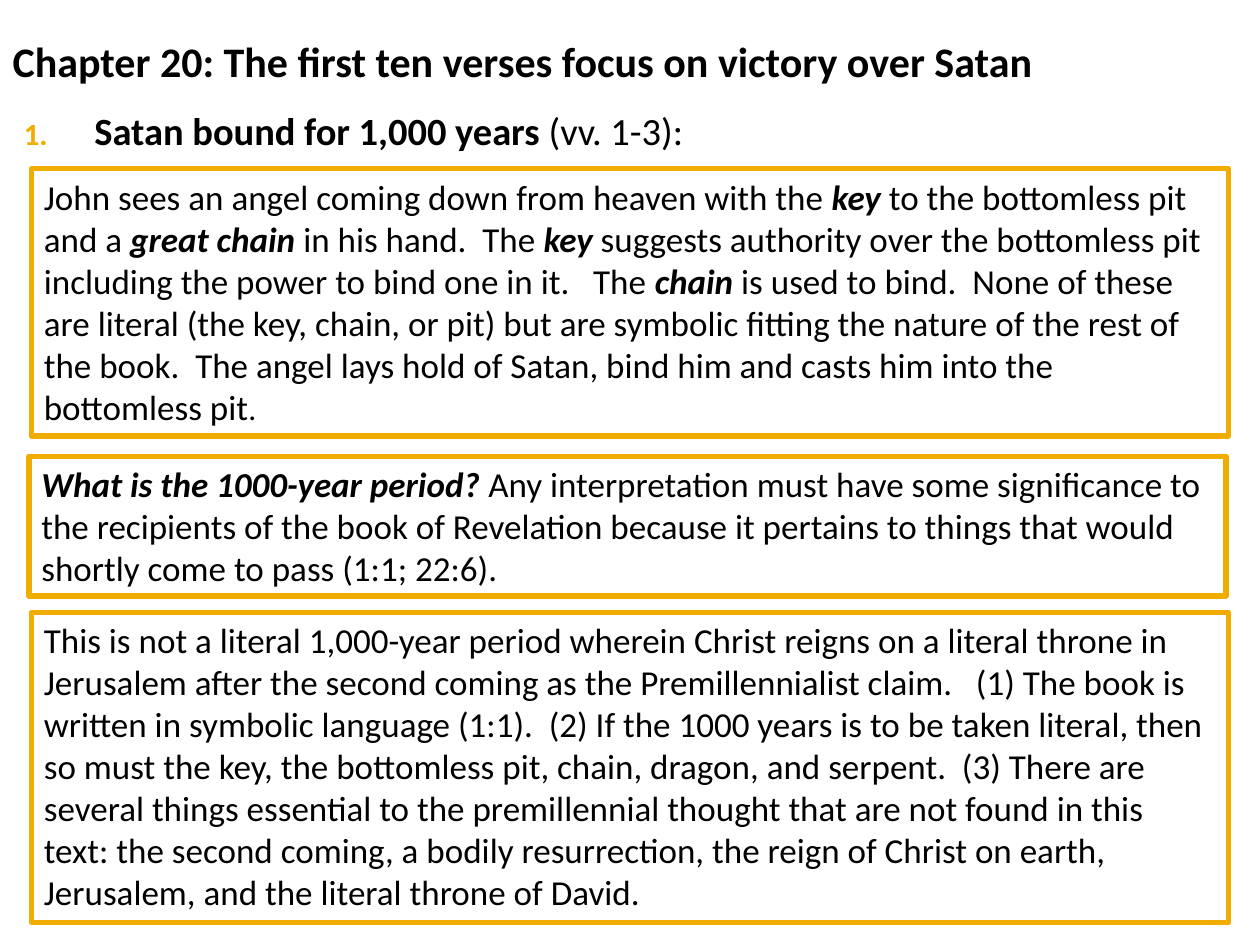
from dataclasses import dataclass

from lxml.etree import SubElement
from pptx import Presentation
from pptx.dml.color import RGBColor
from pptx.enum.shapes import MSO_SHAPE
from pptx.enum.text import MSO_ANCHOR, MSO_AUTO_SIZE, PP_ALIGN
from pptx.oxml.ns import qn
from pptx.slide import Slide
from pptx.text.text import TextFrame, _Paragraph
from pptx.util import Inches, Pt

BLACK = "000000"
GOLD = "F0AD00"
FONT = "Calibri"


@dataclass
class Span:
    text: str
    bold: bool = False
    italic: bool = False
    size: float = 20


@dataclass
class Panel:
    left: float
    top: float
    height: float
    spans: list[Span]


def key_term(text: str) -> Span:
    return Span(text, bold=True, italic=True)


PANELS = [
    Panel(0.25, 1.34, 2.12, [
        Span("John sees an angel coming down from heaven with the "),
        key_term("key "),
        Span("to the bottomless pit and a "),
        key_term("great chain "),
        Span("in his hand.  The "),
        key_term("key "),
        Span("suggests authority over the bottomless pit including the power "
             "to bind one in it.   The "),
        key_term("chain "),
        Span("is used to bind.  None of these are literal (the key, chain, or pit) "
             "but are symbolic fitting the nature of the rest of the book.  "
             "The angel lays hold of Satan, bind him and casts him into the bottomless pit"),
        Span(".", size=18),
    ]),
    Panel(0.25, 4.86, 2.46, [
        Span("This is not a literal 1,000-year period wherein Christ reigns on a literal "
             "throne in Jerusalem after the second coming as the Premillennialist claim.   "
             "(1) The book is written in symbolic language (1:1).  (2) If the 1000 years "
             "is to be taken literal, then so must the key, the bottomless pit, chain, "
             "dragon, and serpent.  (3) There are several things essential to the "
             "premillennial thought that are not found in this text: the second coming, "
             "a bodily resurrection, the reign of Christ on earth, Jerusalem, and the "
             "literal throne of David."),
    ]),
    Panel(0.23, 3.62, 1.11, [
        key_term("What is the 1000-year period? "),
        Span("Any interpretation must have some significance to the recipients of the "
             "book of Revelation because it pertains to things that would shortly come "
             "to pass (1:1; 22:6)."),
    ]),
]


def color(value: str) -> RGBColor:
    return RGBColor.from_string(value)


def write_spans(frame: TextFrame, spans: list[Span]) -> _Paragraph:
    frame.word_wrap = True
    paragraph = frame.paragraphs[0]
    paragraph.alignment = PP_ALIGN.LEFT
    for span in spans:
        run = paragraph.add_run()
        run.text = span.text
        run.font.name = FONT
        run.font.size = Pt(span.size)
        run.font.bold = span.bold
        run.font.italic = span.italic
        run.font.color.rgb = color(BLACK)
    return paragraph


def set_margins(frame: TextFrame, left: float, top: float, right: float, bottom: float) -> None:
    frame.margin_left, frame.margin_top = Inches(left), Inches(top)
    frame.margin_right, frame.margin_bottom = Inches(right), Inches(bottom)


def number_paragraph(paragraph: _Paragraph) -> None:
    properties = paragraph._p.get_or_add_pPr()
    properties.set("marL", str(Inches(0.69)))
    properties.set("indent", str(Inches(-0.56)))
    bullet_color = SubElement(properties, qn("a:buClr"))
    SubElement(bullet_color, qn("a:srgbClr"), val=GOLD)
    SubElement(properties, qn("a:buSzPct"), val="80000")
    SubElement(properties, qn("a:buFont"), typeface="+mj-lt")
    SubElement(properties, qn("a:buAutoNum"), type="arabicPeriod")


def add_title(slide: Slide) -> None:
    title = slide.shapes.title
    title.left, title.top = Inches(0), Inches(-0.2)
    title.width, title.height = Inches(9.5), Inches(1.37)
    frame = title.text_frame
    frame.vertical_anchor = MSO_ANCHOR.MIDDLE
    frame.auto_size = MSO_AUTO_SIZE.NONE
    set_margins(frame, 0.1, 0.05, 0.05, 0.05)
    write_spans(frame, [Span("Chapter 20: The first ten verses focus on victory over Satan",
                             bold=True, size=24)])


def add_heading(slide: Slide) -> None:
    heading = slide.shapes.add_textbox(Inches(0), Inches(0.75), Inches(9.67), Inches(5.17))
    set_margins(heading.text_frame, 0.06, 0.1, 0.1, 0.05)
    paragraph = write_spans(heading.text_frame, [
        Span("Satan bound for 1,000 years ", bold=True, size=22),
        Span("(vv. 1-3):", size=22),
    ])
    number_paragraph(paragraph)


def add_panel(slide: Slide, panel: Panel) -> None:
    shape = slide.shapes.add_shape(
        MSO_SHAPE.RECTANGLE, Inches(panel.left), Inches(panel.top),
        Inches(9.5), Inches(panel.height))
    shape.shadow.inherit = False
    shape.fill.background()
    shape.line.color.rgb = color(GOLD)
    shape.line.width = Pt(3)
    frame = shape.text_frame
    frame.vertical_anchor = MSO_ANCHOR.TOP
    write_spans(frame, panel.spans)
    frame.auto_size = MSO_AUTO_SIZE.SHAPE_TO_FIT_TEXT


def main() -> None:
    presentation = Presentation()
    presentation.slide_width, presentation.slide_height = Inches(10), Inches(7.5)
    slide = presentation.slides.add_slide(presentation.slide_layouts[5])
    add_title(slide)
    add_heading(slide)
    for panel in PANELS:
        add_panel(slide, panel)
    presentation.save("out.pptx")


if __name__ == "__main__":
    main()
